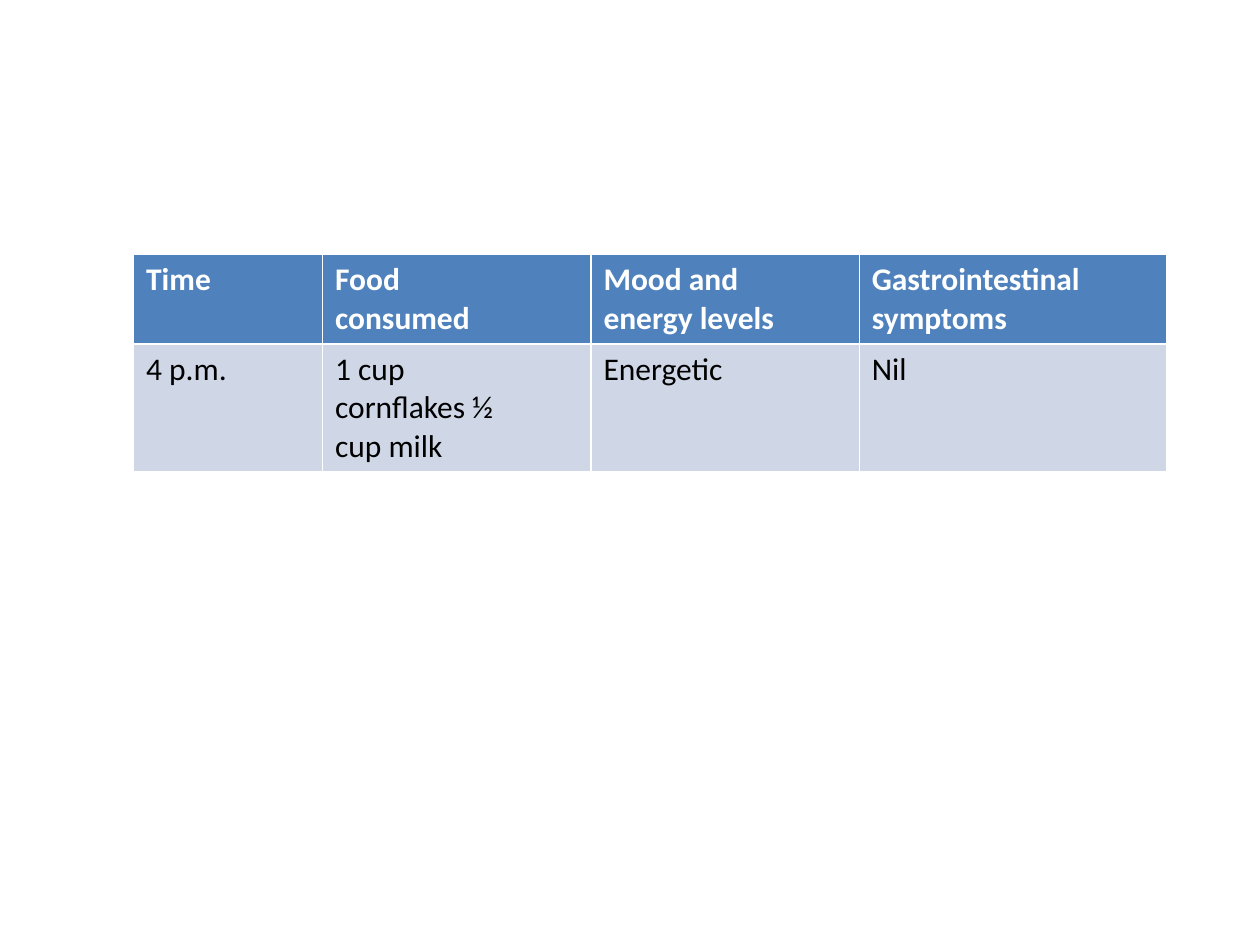
from pptx import Presentation
from pptx.dml.color import RGBColor
from pptx.util import Inches, Pt

COLORS = {"header": "4F81BD", "body": "CFD7E7", "white": "FFFFFF", "black": "000000"}
COLUMN_WIDTHS = [1.5, 2.13, 2.13, 2.44]
ROW_HEIGHT = 0.41
DIARY = [
    ["Time", "Food\nconsumed", "Mood and\nenergy levels", "Gastrointestinal\nsymptoms"],
    ["4 p.m.", "1 cup\ncornflakes ½\ncup milk", "Energetic", "Nil"],
]


def rgb(name):
    """Return the named colour."""
    return RGBColor.from_string(COLORS[name])


def fill_cell(cell, text, is_header):
    """Write and format one diary cell."""
    cell.text = text
    cell.fill.solid()
    cell.fill.fore_color.rgb = rgb("header" if is_header else "body")
    for p in cell.text_frame.paragraphs:
        p.font.name = "Calibri"
        p.font.size = Pt(18)
        p.font.bold = is_header
        p.font.color.rgb = rgb("white" if is_header else "black")


def add_food_diary(s, left, top, width, height):
    """Place the food diary table, with the default style's white borders."""
    table = s.shapes.add_table(
        len(DIARY), len(COLUMN_WIDTHS),
        Inches(left), Inches(top), Inches(width), Inches(height),
    ).table
    for column, column_width in zip(table.columns, COLUMN_WIDTHS):
        column.width = Inches(column_width)
    for i, row in enumerate(DIARY):
        for j, text in enumerate(row):
            fill_cell(table.cell(i, j), text, i == 0)


def main():
    """Build and save the slide."""
    prs = Presentation()
    prs.slide_width, prs.slide_height = Inches(10), Inches(7.5)
    s = prs.slides.add_slide(prs.slide_layouts[6])
    add_food_diary(s, 1.06, 2.02, sum(COLUMN_WIDTHS), ROW_HEIGHT * len(DIARY))
    prs.save("out.pptx")


if __name__ == "__main__":
    main()
